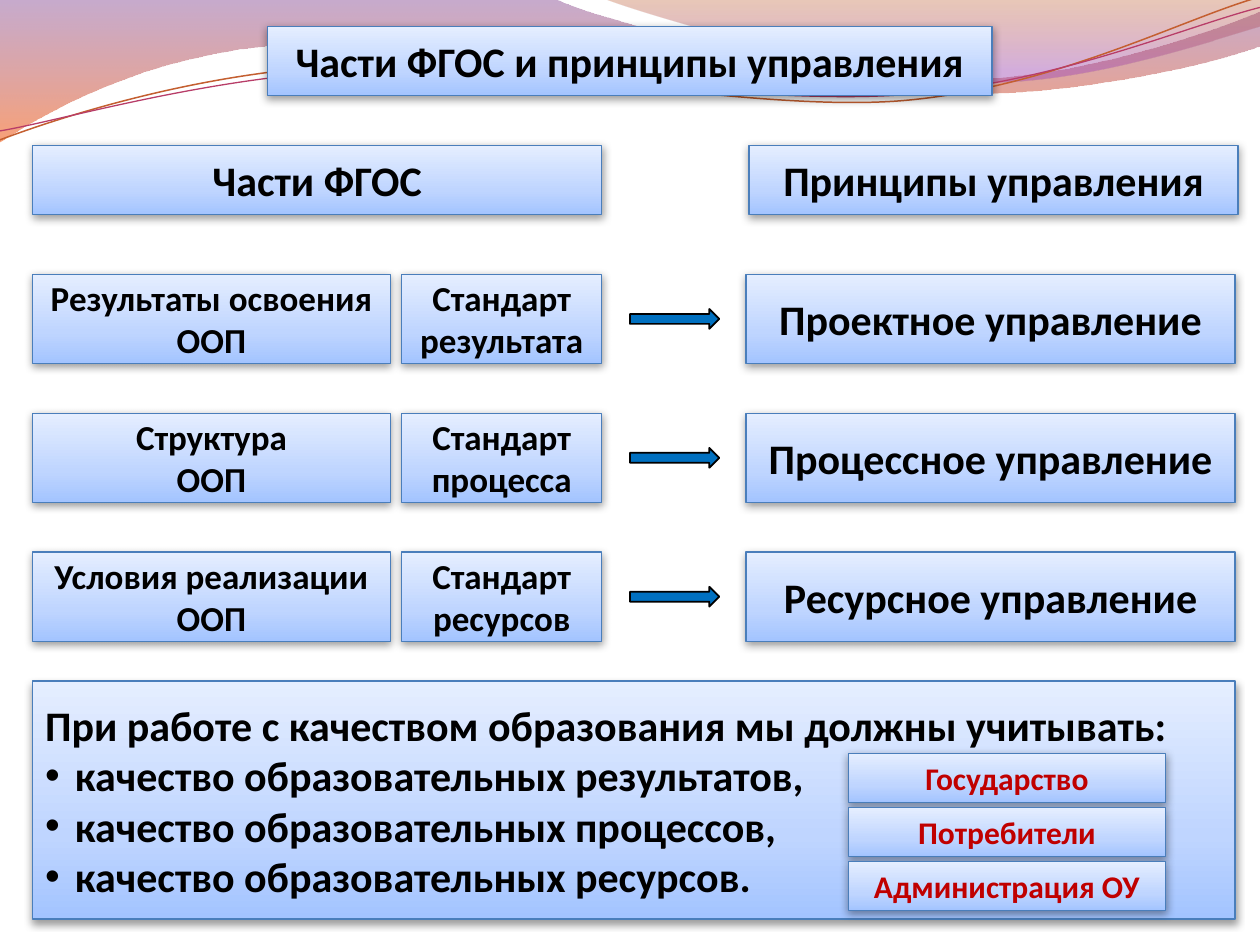
from lxml import etree
from pptx import Presentation
from pptx import util as u
from pptx.dml.color import RGBColor
from pptx.enum import shapes, text
from pptx.oxml import ns

THEME = {
    "font": "Calibri", "ink": "000000", "accent": "C00000",
    "border": "4A7EBB", "arrow": "0070C0",
    "large": 24, "medium": 20, "small": 18,
    # gradient stops: position %, colour, opacity %
    "panel": [(0, "A3C4FF", 100), (35, "BFD5FF", 100), (100, "E5EEFF", 100)],
    "wave_left": [(0, "834591", 45), (100, "F35307", 55)],
    "wave_right": [(0, "B74915", 30), (80, "A14BB4", 45)],
    "threads": [("C45F30", 0.85), ("B83D68", 0.75)],
}


def paint_gradient(shape, stops, angle):
    shape.fill.background()
    blank = shape._element.spPr.find(ns.qn("a:noFill"))
    grad = etree.Element(ns.qn("a:gradFill"), rotWithShape="1")
    stop_list = etree.SubElement(grad, ns.qn("a:gsLst"))
    for position, colour, opacity in stops:
        stop = etree.SubElement(stop_list, ns.qn("a:gs"), pos=str(position * 1000))
        rgb = etree.SubElement(stop, ns.qn("a:srgbClr"), val=colour)
        if opacity < 100:
            etree.SubElement(rgb, ns.qn("a:alpha"), val=str(opacity * 1000))
    etree.SubElement(grad, ns.qn("a:lin"), ang=str(angle * 60000), scaled="0")
    blank.getparent().replace(blank, grad)


def add_panel(left, top, width, height, lines, size,
              colour=THEME["ink"], align=text.PP_ALIGN.CENTER):
    box = page.shapes.add_shape(shapes.MSO_SHAPE.RECTANGLE, u.Cm(left), u.Cm(top),
                                u.Cm(width), u.Cm(height))
    paint_gradient(box, THEME["panel"], 270)
    box.line.color.rgb = RGBColor.from_string(THEME["border"])
    box.line.width = u.Pt(0.75)
    box.shadow.inherit = False
    effects = box._element.spPr.find(ns.qn("a:effectLst"))
    shadow = etree.SubElement(effects, ns.qn("a:outerShdw"), blurRad=str(u.Pt(5)),
                              dist=str(u.Pt(1.6)), dir="5400000", rotWithShape="0")
    rgb = etree.SubElement(shadow, ns.qn("a:srgbClr"), val=THEME["ink"])
    etree.SubElement(rgb, ns.qn("a:alpha"), val="38000")
    frame = box.text_frame
    frame.word_wrap = True
    frame.vertical_anchor = text.MSO_ANCHOR.MIDDLE
    font_format = {"name": THEME["font"], "size": u.Pt(size), "bold": True}
    for number, line in enumerate(lines):
        para = frame.add_paragraph() if number else frame.paragraphs[0]
        para.text = line
        para.alignment = align
        for span in para.runs:
            for name, value in font_format.items():
                setattr(span.font, name, value)
            span.font.color.rgb = RGBColor.from_string(colour)
    return box


deck = Presentation()
deck.slide_width, deck.slide_height = u.Cm(25.4), u.Cm(19.05)
page = deck.slides.add_slide(deck.slide_layouts[6])

# Decorative waves: a point is a straight step, three points are a Bezier curve (cm)
WAVES = [
    ((0, 0), [
        [(11.18, -0.03)],
        [(12.09, 0.43), (16.87, 1.6), (19.25, 1.6)],
        [(21.67, 1.6), (24.33, 0.66), (25.4, 0.23)],
        [(25.43, 0.91)],
        [(24.97, 1.12), (22.1, 1.93), (18.95, 1.9)],
        [(15.8, 1.9), (9.7, 0.71), (6.53, 0.86)],
        [(3.28, 0.91), (1.17, 2.11), (-0.03, 2.87)],
        [(0, 0)]], THEME["wave_left"], None),
    ((12.17, -0.03), [
        [(12.93, 0.28), (17.32, 1.57), (19.53, 1.65)],
        [(21.74, 1.75), (24.41, 0.81), (25.4, 0.53)],
        [(25.4, 0)],
        [(12.17, -0.03)]], THEME["wave_right"], None),
    ((-0.05, 2.22), [
        [(1.19, 1.82), (4.02, 1.04), (7.05, 1.05)],
        [(10.05, 1.07), (15.02, 2.37), (18.08, 2.29)],
        [(21.13, 2.2), (23.87, 0.91), (25.41, 0.55)]], None, THEME["threads"][0]),
    ((-0.04, 2.04), [
        [(1.16, 1.9), (4.18, 1.15), (7.2, 1.16)],
        [(10.25, 1.18), (15.13, 2.25), (18.18, 2.17)],
        [(21.21, 2.1), (23.93, 1.06), (25.45, 0.75)]], None, THEME["threads"][1]),
]
for start, segments, stops, stroke in WAVES:
    builder = page.shapes.build_freeform(u.Cm(start[0]), u.Cm(start[1]))
    builder.add_line_segments([(u.Cm(x), u.Cm(y)) for segment in segments
                               for x, y in segment], close=stops is not None)
    wave = builder.convert_to_shape()
    steps = iter(list(wave._element.spPr.iter(ns.qn("a:lnTo"))))
    for segment in segments:
        group = [next(steps) for point in segment]
        if len(group) == 3:
            curve = etree.Element(ns.qn("a:cubicBezTo"))
            group[0].addprevious(curve)
            for step in group:
                curve.append(step[0])
                step.getparent().remove(step)
    wave.shadow.inherit = False
    if stops:
        paint_gradient(wave, stops, 90)
        wave.line.fill.background()
    else:
        wave.rotation = 357.3
        wave.fill.background()
        wave.line.color.rgb = RGBColor.from_string(stroke[0])
        wave.line.width = u.Pt(stroke[1])

# Title and column headings
LEFT, RIGHT = 0.66, 15.04
for left, top, width, heading in [
    (5.39, 0.53, 14.61, "Части ФГОС и принципы управления"),
    (LEFT, 2.93, 11.47, "Части ФГОС"),
    (15.1, 2.93, 9.86, "Принципы управления"),
]:
    add_panel(left, top, width, 1.4, [heading], THEME["large"])

# Rows: part of the standard, its kind, arrow, management principle
ROWS = [
    ("Результаты освоения ООП", "Стандарт\vрезультата", "Проектное управление"),
    ("Структура\vООП", "Стандарт\vпроцесса", "Процессное управление"),
    ("Условия реализации ООП", "Стандарт\vресурсов", "Ресурсное управление"),
]
for row, (part, standard, principle) in enumerate(ROWS):
    top = 5.53 + row * 2.8
    add_panel(LEFT, top, 7.21, 1.8, [part], THEME["medium"])
    add_panel(8.1, top, 4.03, 1.8, [standard], THEME["medium"])
    add_panel(RIGHT, top, 9.86, 1.8, [principle], THEME["large"])
    arrow = page.shapes.add_shape(shapes.MSO_SHAPE.RIGHT_ARROW, u.Cm(12.7),
                                  u.Cm(top + 0.7), u.Cm(1.8), u.Cm(0.4))
    arrow.shadow.inherit = False
    arrow.fill.solid()
    arrow.fill.fore_color.rgb = RGBColor.from_string(THEME["arrow"])
    arrow.line.color.rgb = RGBColor.from_string(THEME["ink"])
    arrow.line.width = u.Pt(1)

# Summary with a bulleted list
summary = add_panel(LEFT, 13.73, 24.24, 4.8, [
    "При работе с качеством образования мы должны учитывать:",
    "качество образовательных результатов,",
    "качество образовательных процессов,",
    "качество образовательных ресурсов.",
], THEME["large"], align=text.PP_ALIGN.LEFT)
for para in summary.text_frame.paragraphs[1:]:
    props = para._p.get_or_add_pPr()
    props.set("marL", str(u.Cm(0.6)))
    props.set("indent", str(-u.Cm(0.6)))
    etree.SubElement(props, ns.qn("a:buFont"), typeface="Arial")
    etree.SubElement(props, ns.qn("a:buChar"), char="•")

# Interested parties
for row, party in enumerate(["Государство", "Потребители", "Администрация ОУ"]):
    add_panel(17.1, 15.19 + row * 1.09, 6.4, 0.99, [party], THEME["small"],
              THEME["accent"])

deck.save("out.pptx")
